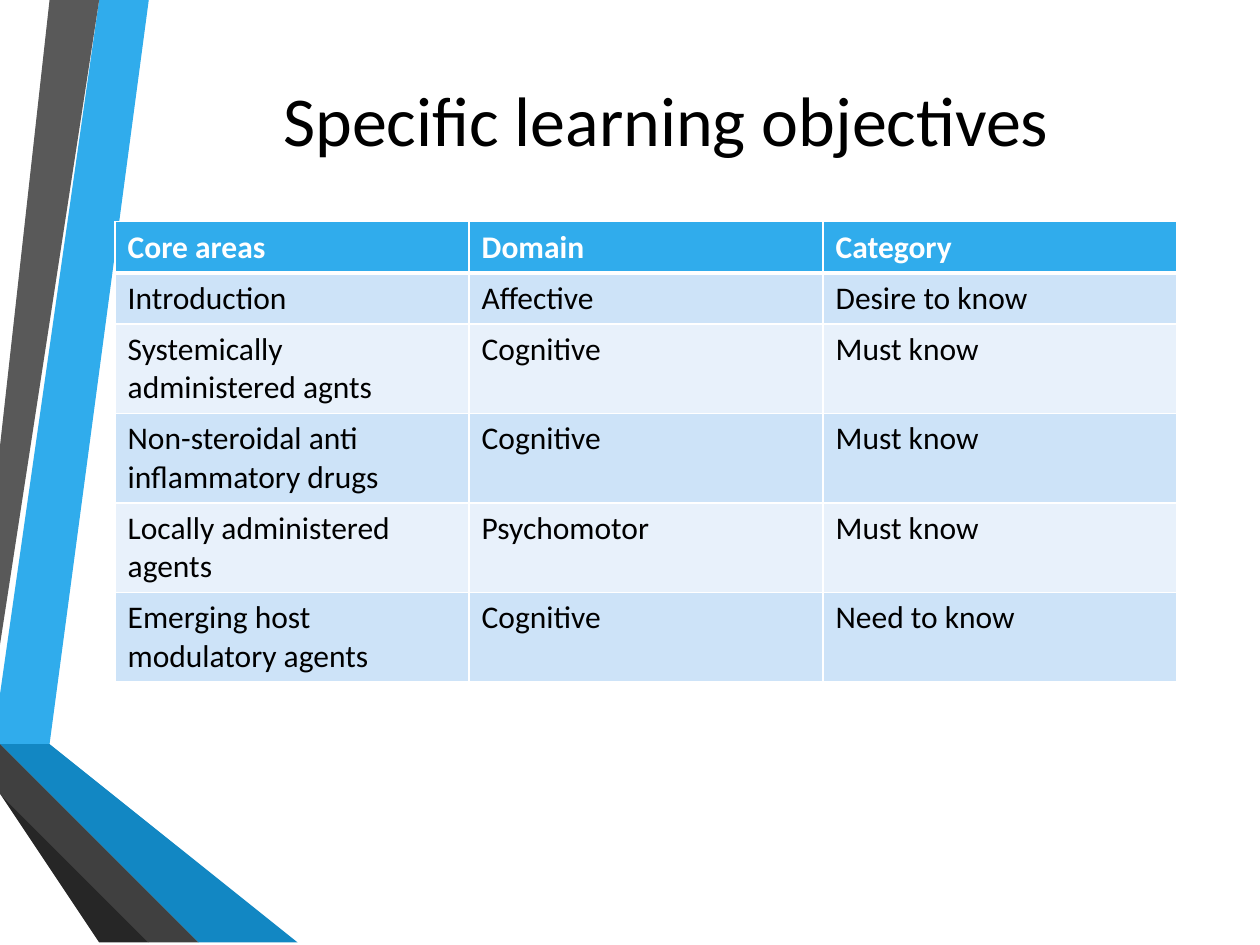
import pptx
import pptx.util
import pptx.dml.color
import pptx.enum.text
import pptx.oxml
import pptx.oxml.ns
from pptx.util import Cm

# Content
TITLE = "Specific learning objectives"
ROWS = [
    ("Core areas", "Domain", "Category"),
    ("Introduction", "Affective", "Desire to know"),
    ("Systemically administered agnts", "Cognitive", "Must know"),
    ("Non-steroidal anti inflammatory drugs", "Cognitive", "Must know"),
    ("Locally administered agents", "Psychomotor", "Must know"),
    ("Emerging host modulatory agents", "Cognitive", "Need to know"),
]

# Theme
THEME = {
    "font": "Calibri", "title_size": 40, "table_size": 18,
    "text": "000000", "white": "FFFFFF", "header": "30ACEC",
    "bands": ("CDE3F8", "E8F1FB"),
}

# Side ribbons: colour and corner points in cm
RIBBONS = [
    ("30ACEC", [(0, 13.82), (0, 14.6), (0.56, 14.7), (2.97, 0), (2.26, 0)]),
    ("595959", [(2.11, 0), (1.4, 0), (0, 8.53), (0, 12.85)]),
    ("262626", [(0, 15.72), (0, 15.77), (2.36, 19.05), (2.51, 19.05)]),
    ("0C5A82", [(0, 14.7), (0, 14.73), (3.96, 19.05), (4.14, 19.05)]),
    ("1287C3", [(0, 14.7), (4.14, 19.05), (5.92, 19.05), (0.56, 14.7), (0, 14.6)]),
    ("404040", [(0, 15.72), (2.51, 19.05), (3.84, 19.05), (0, 14.88)]),
]


def rgb(value):
    return pptx.dml.color.RGBColor.from_string(value)


def add_run(p, text, size, color, bold=False):
    r = p.add_run()
    r.text = text
    r.font.name = THEME["font"]
    r.font.size = pptx.util.Pt(size)
    r.font.bold = bold
    r.font.color.rgb = rgb(color)


def add_ribbon(s, color, points):
    start, *rest = points
    builder = s.shapes.build_freeform(*start, scale=Cm(1))
    builder.add_line_segments(rest, close=True)
    sp = builder.convert_to_shape()
    sp.shadow.inherit = False
    sp.fill.solid()
    sp.fill.fore_color.rgb = rgb(color)
    sp.line.fill.background()


def set_borders(cell, bottom):
    tc_pr = cell._tc.get_or_add_tcPr()
    widths = {"lnL": 1, "lnR": 1, "lnT": 1, "lnB": bottom}
    for i, (side, width) in enumerate(widths.items()):
        tc_pr.insert(i, pptx.oxml.parse_xml(
            f'<a:{side} {pptx.oxml.ns.nsdecls("a")} w="{pptx.util.Pt(width)}">'
            f'<a:solidFill><a:srgbClr val="{THEME["white"]}"/></a:solidFill>'
            f'</a:{side}>'))


prs = pptx.Presentation()
prs.slide_width, prs.slide_height = Cm(25.4), Cm(19.05)
s = prs.slides.add_slide(prs.slide_layouts[5])

# Ribbons
for color, points in RIBBONS:
    add_ribbon(s, color, points)

# Title
title = s.shapes.title
title.left, title.top, title.width, title.height = Cm(2.72), Cm(1.27), Cm(21.41), Cm(2.24)
tf = title.text_frame
tf.vertical_anchor = pptx.enum.text.MSO_ANCHOR.MIDDLE
p = tf.paragraphs[0]
p.alignment = pptx.enum.text.PP_ALIGN.CENTER
add_run(p, TITLE, THEME["title_size"], THEME["text"])

# Table
row_height = 1.03
table = s.shapes.add_table(len(ROWS), len(ROWS[0]), Cm(2.32), Cm(4.47),
                           Cm(21.41), Cm(row_height * len(ROWS))).table
for i, values in enumerate(ROWS):
    header = i == 0
    table.rows[i].height = Cm(row_height)
    fill = THEME["header"] if header else THEME["bands"][(i - 1) % 2]
    color = THEME["white"] if header else THEME["text"]
    for j, text in enumerate(values):
        cell = table.cell(i, j)
        cell.fill.solid()
        cell.fill.fore_color.rgb = rgb(fill)
        set_borders(cell, bottom=3 if header else 1)
        add_run(cell.text_frame.paragraphs[0], text, THEME["table_size"], color, header)

prs.save("out.pptx")
